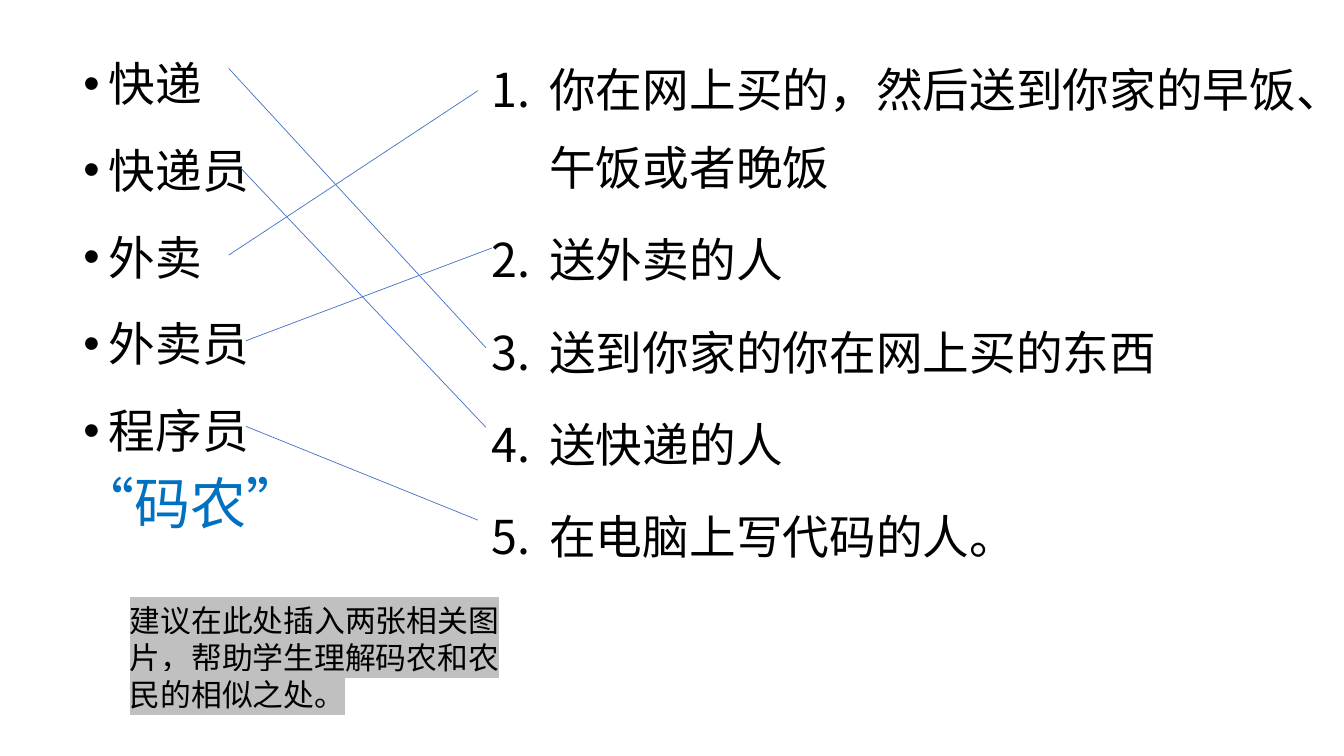
from dataclasses import dataclass

from lxml import etree
from pptx import Presentation
from pptx.dml.color import RGBColor
from pptx.enum.shapes import MSO_CONNECTOR
from pptx.oxml.ns import qn
from pptx.util import Pt

PX = 9144  # 100 px to the inch
STRAIGHT = MSO_CONNECTOR.STRAIGHT


@dataclass(frozen=True)
class Theme:
    ink: str = "000000"
    blue: str = "0070C0"
    line: str = "4472C4"
    mark: str = "C0C0C0"
    serif: str = "Cambria"
    sans: str = "Noto Sans CJK SC"
    body: float = 33.3
    nick: float = 40
    note: float = 22
    thin: float = 0.5


THEME = Theme()

TERMS = ["快递", "快递员", "外卖", "外卖员", "程序员"]
MEANINGS = [
    "你在网上买的，然后送到你家的早饭、午饭或者晚饭",
    "送外卖的人",
    "送到你家的你在网上买的东西",
    "送快递的人",
    "在电脑上写代码的人。",
]
# Ends of each match, from meaning to term
MATCHES = [
    ((474, 90), (227, 253)),
    ((488, 246), (244, 338)),
    ((482, 345), (227, 68)),
    ((482, 424), (239, 167)),
    ((474, 516), (244, 423)),
]


def set_bullet(para, bullet, indent):
    """Hang a character, or numbers if the bullet is "1.", by indent px."""
    props = para._p.get_or_add_pPr()
    props.set("marL", str(indent * PX))
    props.set("indent", str(-indent * PX))
    if bullet == "1.":
        etree.SubElement(props, qn("a:buFont"), typeface="+mj-lt")
        etree.SubElement(props, qn("a:buAutoNum"), type="arabicPeriod")
    else:
        etree.SubElement(props, qn("a:buFont"), typeface="Arial")
        etree.SubElement(props, qn("a:buChar"), char=bullet)


def set_mark(run, color):
    fill = run._r.get_or_add_rPr().find(qn("a:solidFill"))
    mark = etree.Element(qn("a:highlight"))
    etree.SubElement(mark, qn("a:srgbClr"), val=color)
    fill.addnext(mark)


def add_text(slide, box, lines, size, font=THEME.sans, color=THEME.ink,
             space=None, before=0, bullet=None, indent=0, mark=None, wrap=True):
    shape = slide.shapes.add_textbox(*(v * PX for v in box))
    frame = shape.text_frame
    frame.word_wrap = wrap
    for i, line in enumerate(lines):
        para = frame.add_paragraph() if i else frame.paragraphs[0]
        para.space_before = Pt(before)
        if space:
            para.line_spacing = space
        if bullet:
            set_bullet(para, bullet, indent)
        run = para.add_run()
        run.text = line
        run.font.size = Pt(size)
        run.font.name = font
        run.font.color.rgb = RGBColor.from_string(color)
        if mark:
            set_mark(run, mark)


def add_terms(slide, box):
    left, top, width, height = box
    add_text(slide, box, TERMS, THEME.body, font=THEME.serif,
             space=1.3, before=10, bullet="•", indent=25)
    add_text(slide, (left - 5, top + height, width - 5, 77), ["“码农”"],
             THEME.nick, color=THEME.blue, wrap=False)


def add_meanings(slide, box):
    add_text(slide, box, MEANINGS, THEME.body, font=THEME.serif,
             space=1.4, before=10, bullet="1.", indent=57)


def add_matches(slide):
    for start, end in MATCHES:
        line = slide.shapes.add_connector(
            STRAIGHT, *(v * PX for v in start + end))
        line.line.color.rgb = RGBColor.from_string(THEME.line)
        line.line.width = Pt(THEME.thin)
        etree.SubElement(line._element.spPr, qn("a:effectLst"))


def add_note(slide, box):
    add_text(slide, box, ["建议在此处插入两张相关图片，帮助学生理解码农和农民的相似之处。"],
             THEME.note, mark=THEME.mark)


def main():
    deck = Presentation()
    deck.slide_width, deck.slide_height = 1333 * PX, 750 * PX
    slide = deck.slides.add_slide(deck.slide_layouts[6])
    add_terms(slide, (73, 33, 250, 427))
    add_meanings(slide, (478, 33, 855, 530))
    add_matches(slide)
    add_note(slide, (119, 592, 388, 121))
    deck.save("out.pptx")


if __name__ == "__main__":
    main()
